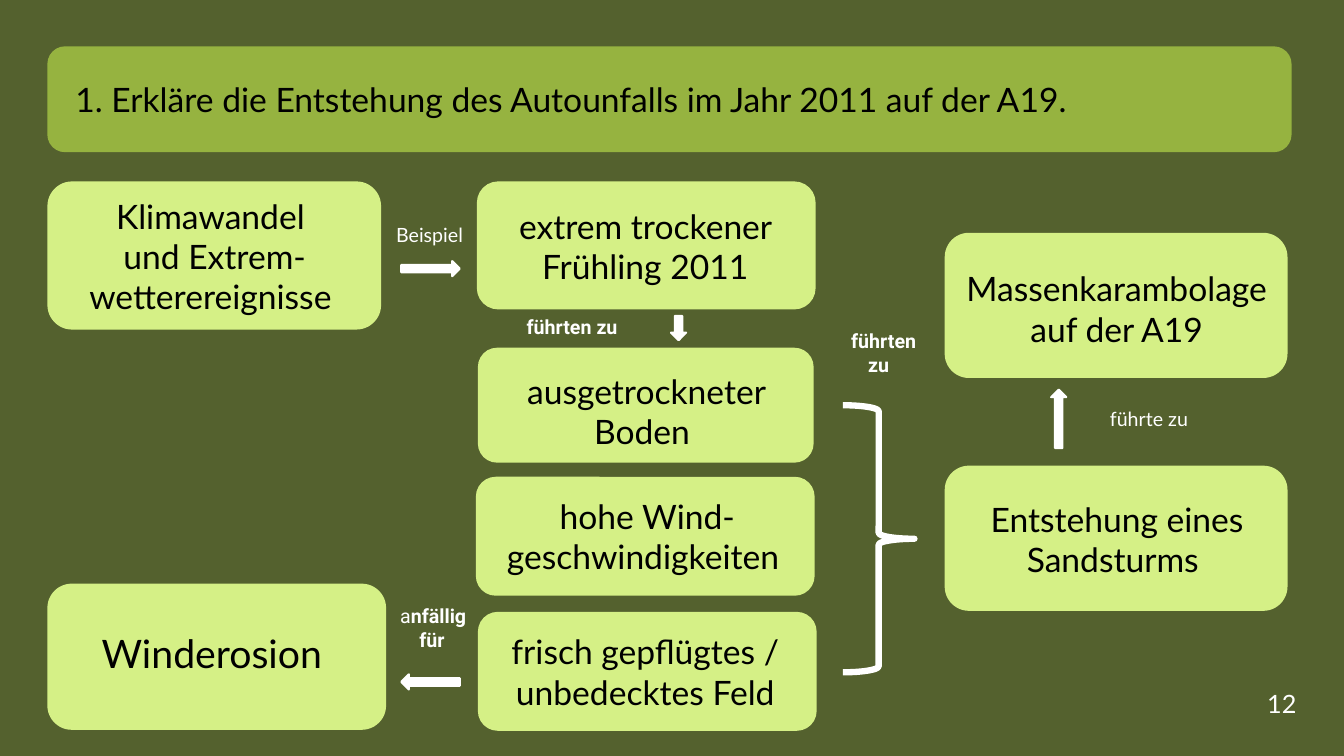
import pptx
import pptx.dml.color
import pptx.enum.shapes
import pptx.enum.text
import pptx.util

Inches = pptx.util.Inches
Pt = pptx.util.Pt
MSO_SHAPE = pptx.enum.shapes.MSO_SHAPE
PP_ALIGN = pptx.enum.text.PP_ALIGN

BACKGROUND = "54612E"
TITLE_GREEN = "96B340"
BOX_GREEN = "D5F086"
WHITE = "FFFFFF"
BLACK = "000000"

BOXES = [
    ((0.47, 1.8, 3.31, 1.47), (0.55, 1.88, 3.16, 1.31),
     "Klimawandel \nund Extrem-wetterereignisse ", 24),
    ((4.73, 1.8, 3.36, 1.27), (4.92, 1.51, 2.96, 1.38),
     "extrem trockener Frühling 2011", 24),
    ((0.47, 5.79, 3.36, 1.45), (0.57, 6.19, 3.16, 0.57), "Winderosion ", 28),
    ((4.74, 3.45, 3.33, 1.14), (4.83, 3.62, 3.16, 0.91),
     "ausgetrockneter Boden ", 24),
    ((9.37, 2.31, 3.4, 1.44), (9.4, 2.59, 3.35, 0.92),
     "Massenkarambolage auf der A19", 24),
    ((9.37, 4.62, 3.4, 1.44), (9.5, 4.89, 3.16, 0.91),
     "Entstehung eines Sandsturms ", 24),
    ((4.72, 4.73, 3.36, 1.18), (4.84, 4.86, 3.16, 0.91),
     "hohe Wind-geschwindigkeiten ", 24),
    ((4.74, 6.07, 3.36, 1.18), (4.82, 6.2, 3.16, 0.91),
     "frisch gepflügtes / unbedecktes Feld", 24),
]

ARROWS = [
    ((3.98, 2.59, 0.58, 0.15), 0),
    ((3.98, 6.69, 0.58, 0.15), 180),
    ((6.61, 3.18, 0.24, 0.15), 90),
    ((10.21, 4.08, 0.58, 0.15), 270),
]

PLAIN_LABELS = [
    ((3.83, 2.15, 1.11, 0.34), "Beispiel", 14),
    ((10.91, 3.98, 1.11, 0.34), "führte zu", 14),
    ((12.47, 6.78, 0.55, 0.4), "12", 18),
]

BOLD_LABELS = [
    (8.16, 3.21, 1.11, 0.57),
    (4.59, 3.07, 2.07, 0.34),
]


def rgb(color):
    return pptx.dml.color.RGBColor.from_string(color)


def add_shape(slide, kind, frame, fill=None, line=None, width=0):
    shape = slide.shapes.add_shape(kind, *map(Inches, frame))
    shape.shadow.inherit = False
    if fill:
        shape.fill.solid()
        shape.fill.fore_color.rgb = rgb(fill)
    else:
        shape.fill.background()
    if line:
        shape.line.color.rgb = rgb(line)
        shape.line.width = Pt(width)
    else:
        shape.line.fill.background()
    return shape


def format_run(run, size, color, font, bold=False):
    run.font.size = Pt(size)
    run.font.color.rgb = rgb(color)
    run.font.name = font
    run.font.bold = bold


def add_text(slide, frame, text, size, color, alignment=PP_ALIGN.LEFT,
             font="Lato", bold=False):
    text_frame = slide.shapes.add_textbox(*map(Inches, frame)).text_frame
    text_frame.word_wrap = True
    text_frame.vertical_anchor = pptx.enum.text.MSO_ANCHOR.BOTTOM
    text_frame.text = text
    for paragraph in text_frame.paragraphs:
        paragraph.alignment = alignment
        for run in paragraph.runs:
            format_run(run, size, color, font, bold)
    return text_frame


def indent_first_line(paragraph, indent):
    paragraph._p.get_or_add_pPr().set("indent", str(Inches(indent)))


def add_bold_label(slide, frame):
    text_frame = add_text(slide, frame, "führten zu", 14, WHITE,
                          PP_ALIGN.CENTER, "Roboto", True)
    indent_first_line(text_frame.paragraphs[0], 0.1)


def add_prone_label(slide):
    text_frame = add_text(slide, (3.73, 5.94, 1.11, 0.57), "a\nfür", 14, WHITE,
                          PP_ALIGN.CENTER, "Roboto", True)
    first = text_frame.paragraphs[0]
    first.alignment = PP_ALIGN.LEFT
    first.runs[0].font.bold = False
    ending = first.add_run()
    ending.text = "nfällig"
    format_run(ending, 14, WHITE, "Roboto", True)
    indent_first_line(first, 0.14)


def main():
    presentation = pptx.Presentation()
    presentation.slide_width = Inches(13.33)
    presentation.slide_height = Inches(7.5)
    slide = presentation.slides.add_slide(presentation.slide_layouts[6])
    slide.background.fill.solid()
    slide.background.fill.fore_color.rgb = rgb(BACKGROUND)

    add_shape(slide, MSO_SHAPE.ROUNDED_RECTANGLE, (0.47, 0.46, 12.34, 1.05),
              TITLE_GREEN)
    add_text(slide, (0.65, 0.25, 11.91, 0.98),
             "1. Erkläre die Entstehung des Autounfalls im Jahr 2011 auf der A19.",
             24, BLACK)
    for box_frame, text_area, text, size in BOXES:
        add_shape(slide, MSO_SHAPE.ROUNDED_RECTANGLE, box_frame, BOX_GREEN)
        add_text(slide, text_area, text, size, BLACK, PP_ALIGN.CENTER)
    add_shape(slide, MSO_SHAPE.RIGHT_BRACE, (8.36, 4.02, 0.71, 2.65),
              line=WHITE, width=4.5)
    for frame, rotation in ARROWS:
        arrow = add_shape(slide, MSO_SHAPE.RIGHT_ARROW, frame, WHITE, WHITE, 1.5)
        arrow.rotation = rotation
    for frame, text, size in PLAIN_LABELS:
        add_text(slide, frame, text, size, WHITE)
    for frame in BOLD_LABELS:
        add_bold_label(slide, frame)
    add_prone_label(slide)

    presentation.save("out.pptx")


if __name__ == "__main__":
    main()
